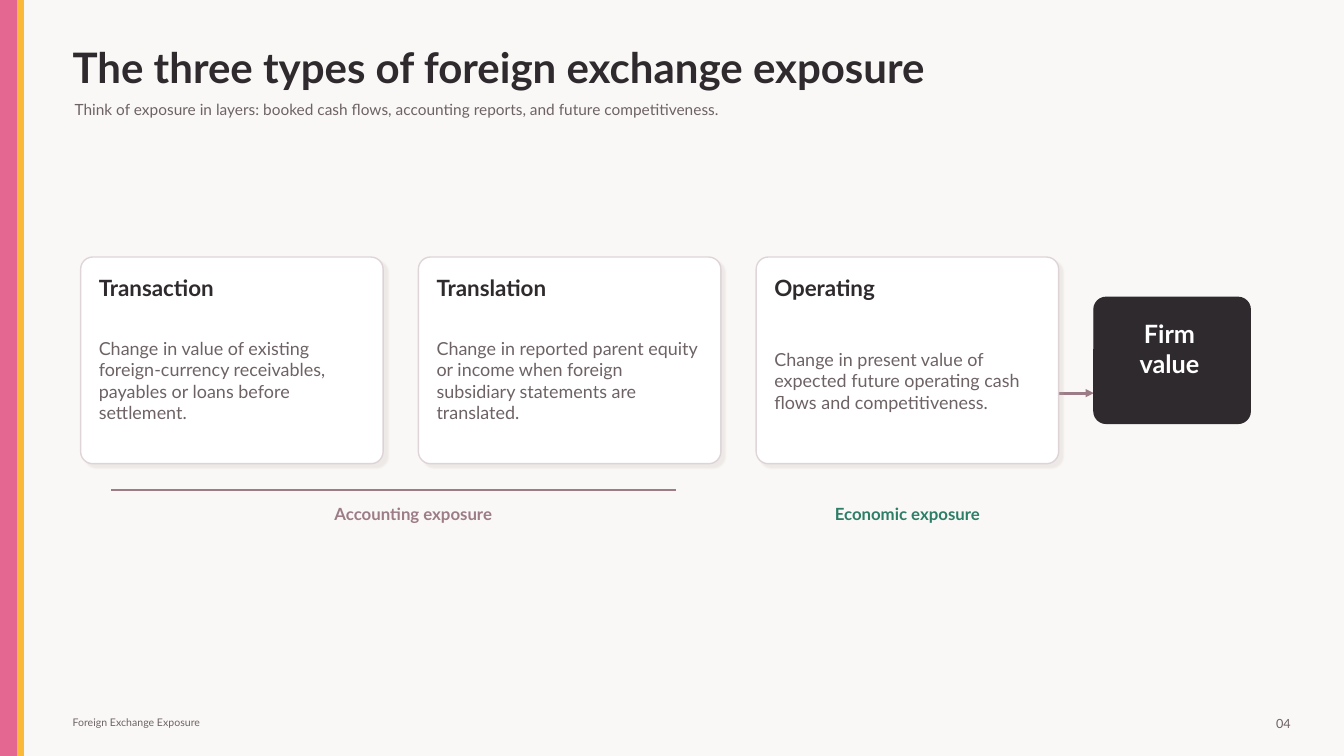
from lxml import etree
from pptx import Presentation
from pptx import util as u
from pptx.dml import color
from pptx.enum import shapes, text
from pptx.oxml import ns

PX = 9144
INK, MUTED, MAUVE, GREEN = "2F2A2D", "6D6264", "9B7C87", "2E7D67"
PAPER, WHITE, PINK, AMBER = "FAF8F6", "FFFFFF", "E46791", "FAB938"
EDGE, SHADE = "D8CCD0", "B8ADA8"
LEFT, CENTER, RIGHT = text.PP_ALIGN.LEFT, text.PP_ALIGN.CENTER, text.PP_ALIGN.RIGHT


def rgb(value):
    """Return a colour from a hex string."""
    return color.RGBColor.from_string(value)


def sub(parent, tag, **attrs):
    """Append a DrawingML child element."""
    return etree.SubElement(parent, ns.qn("a:" + tag), {k: str(v) for k, v in attrs.items()})


class Deck:
    """Holds the font and the current slide and draws its elements."""

    def __init__(self, width, height, font):
        """Open a one-slide presentation."""
        self.prs = Presentation()
        self.prs.slide_width, self.prs.slide_height = width * PX, height * PX
        self.font = font
        self.slide = self.prs.slides.add_slide(self.prs.slide_layouts[6])
        fill = self.slide.background.fill
        fill.solid()
        fill.fore_color.rgb = rgb(PAPER)

    def box(self, x, y, w, h, fill, line=None, radius=0):
        """Draw a rectangle, rounded when a radius is given."""
        kind = shapes.MSO_SHAPE.ROUNDED_RECTANGLE if radius else shapes.MSO_SHAPE.RECTANGLE
        sp = self.slide.shapes.add_shape(kind, x * PX, y * PX, w * PX, h * PX)
        if radius:
            sp.adjustments[0] = radius / min(w, h)
        sp.shadow.inherit = False
        sp.fill.solid()
        sp.fill.fore_color.rgb = rgb(fill)
        sp.line.color.rgb = rgb(line or fill)
        sp.line.width = u.Pt(1)
        return sp

    def card(self, x, y, w, h, title, body):
        """Draw a shadowed card with a title and a body."""
        sp = self.box(x, y, w, h, WHITE, EDGE, 12)
        sub(sp.line._ln.find(".//" + ns.qn("a:srgbClr")), "alpha", val=80000)
        effects = sp._element.spPr.find(ns.qn("a:effectLst"))
        shadow = sub(effects, "outerShdw", blurRad=u.Pt(1), dist=u.Pt(4),
                     dir=45 * 60000, algn="ctr", rotWithShape=0)
        sub(sub(shadow, "srgbClr", val=SHADE), "alpha", val=18000)
        self.label(x + 18, y + 16, w - 36, 28, title, 16, INK, bold=True)
        self.label(x + 18, y + 55, w - 36, 135, body, 12.8, MUTED)

    def label(self, x, y, w, h, words, size, ink, bold=False, align=LEFT):
        """Write one paragraph per line of words, centred vertically."""
        tf = self.slide.shapes.add_textbox(x * PX, y * PX, w * PX, h * PX).text_frame
        tf.word_wrap = True
        tf.vertical_anchor = text.MSO_ANCHOR.MIDDLE
        tf.margin_left = tf.margin_right = tf.margin_top = tf.margin_bottom = 0
        for i, line in enumerate(words.split("\n")):
            p = tf.add_paragraph() if i else tf.paragraphs[0]
            p.alignment = align
            r = p.add_run()
            r.text = line
            r.font.name, r.font.size, r.font.bold = self.font, u.Pt(size), bold
            r.font.color.rgb = rgb(ink)

    def line(self, x1, x2, y, ink, width, arrow=False):
        """Draw a horizontal line, with an arrowhead if asked."""
        cn = self.slide.shapes.add_connector(
            shapes.MSO_CONNECTOR.STRAIGHT, x1 * PX, y * PX, x2 * PX, y * PX)
        cn.line.color.rgb = rgb(ink)
        cn.line.width = u.Pt(width)
        if arrow:
            sub(cn.line._ln, "tailEnd", type="triangle")
        sub(cn._element.spPr, "effectLst")


def main():
    """Build and save the slide."""
    deck = Deck(1333, 750, "Lato")
    for x, w, fill in ((0, 1333, PAPER), (0, 18, PINK), (18, 5, AMBER)):
        deck.box(x, 0, w, 750, fill)
    deck.label(72, 42, 1190, 48, "The three types of foreign exchange exposure", 30, INK, bold=True)
    deck.label(74, 94, 1140, 28, "Think of exposure in layers: booked cash flows, "
               "accounting reports, and future competitiveness.", 11, MUTED)
    deck.label(72, 708, 350, 18, "Foreign Exchange Exposure", 7.5, MUTED)
    deck.label(1245, 705, 35, 25, "04", 9, MUTED, align=RIGHT)

    deck.line(975, 1085, 390, MAUVE, 2, arrow=True)
    cards = (
        ("Transaction", "Change in value of existing foreign-currency receivables, "
                        "payables or loans before settlement."),
        ("Translation", "Change in reported parent equity or income when foreign "
                        "subsidiary statements are translated."),
        ("Operating", "Change in present value of expected future operating cash "
                      "flows and competitiveness."),
    )
    for i, (title, body) in enumerate(cards):
        deck.card(80 + 335 * i, 255, 300, 205, title, body)

    deck.box(1085, 295, 155, 125, INK, radius=12)
    deck.label(1105, 318, 110, 55, "Firm\nvalue", 18, WHITE, bold=True, align=CENTER)
    deck.label(135, 495, 550, 30, "Accounting exposure", 12, MAUVE, bold=True, align=CENTER)
    deck.line(110, 670, 486, MAUVE, 1.5)
    deck.label(750, 495, 300, 30, "Economic exposure", 12, GREEN, bold=True, align=CENTER)
    deck.prs.save("out.pptx")


if __name__ == "__main__":
    main()
